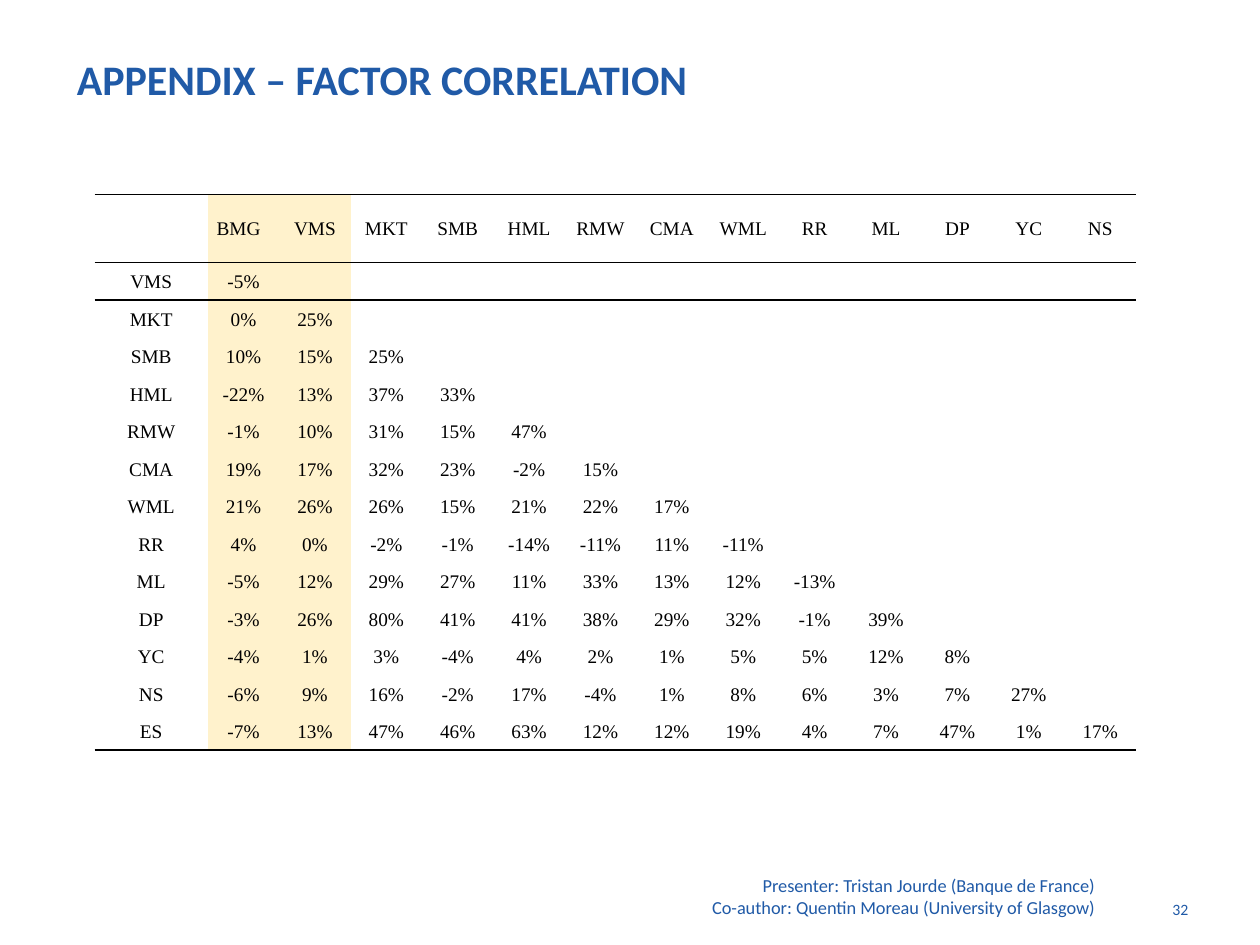
"""Build the appendix slide with the factor correlation table."""
import pptx
import pptx.dml.color
import pptx.enum.text
import pptx.oxml
import pptx.oxml.ns
import pptx.util

BLUE = pptx.dml.color.RGBColor(0x20, 0x5A, 0xA7)
BLACK = pptx.dml.color.RGBColor(0x00, 0x00, 0x00)
CREAM = pptx.dml.color.RGBColor(0xFF, 0xF2, 0xCC)
NO_GRID_STYLE = "{2D5ABB26-0587-4C30-8999-92F81FD0307C}"
ALIGN = pptx.enum.text.PP_ALIGN
ANCHOR = pptx.enum.text.MSO_ANCHOR

FACTORS = ["BMG", "VMS", "MKT", "SMB", "HML", "RMW", "CMA", "WML", "RR", "ML", "DP", "YC", "NS", "ES"]
CORRELATIONS = [
    [-5],
    [0, 25],
    [10, 15, 25],
    [-22, 13, 37, 33],
    [-1, 10, 31, 15, 47],
    [19, 17, 32, 23, -2, 15],
    [21, 26, 26, 15, 21, 22, 17],
    [4, 0, -2, -1, -14, -11, 11, -11],
    [-5, 12, 29, 27, 11, 33, 13, 12, -13],
    [-3, 26, 80, 41, 41, 38, 29, 32, -1, 39],
    [-4, 1, 3, -4, 4, 2, 1, 5, 5, 12, 8],
    [-6, 9, 16, -2, 17, -4, 1, 8, 6, 3, 7, 27],
    [-7, 13, 47, 46, 63, 12, 12, 19, 4, 7, 47, 1, 17],
]


def add_run(paragraph, text, size, color, face="Calibri", bold=False):
    run = paragraph.add_run()
    run.text = text
    run.font.size = pptx.util.Pt(size)
    run.font.name = face
    run.font.bold = bold
    run.font.color.rgb = color


def add_rule(cell, side):
    cell._tc.get_or_add_tcPr().append(pptx.oxml.parse_xml(
        f'<a:{side} {pptx.oxml.ns.nsdecls("a")} w="12700"><a:solidFill>'
        f'<a:srgbClr val="{BLACK}"/></a:solidFill></a:{side}>'))


deck = pptx.Presentation()
deck.slide_width = pptx.util.Inches(10)
deck.slide_height = pptx.util.Inches(7.5)
col = deck.slide_width / 100
row = deck.slide_height / 100
slide = deck.slides.add_slide(deck.slide_layouts[5])

title = slide.shapes.title
title.left, title.top = int(5.1 * col), 0
title.width, title.height = int(90 * col), int(16.67 * row)
title.text_frame.vertical_anchor = ANCHOR.MIDDLE
heading = title.text_frame.paragraphs[0]
heading.alignment = ALIGN.LEFT
add_run(heading, "APPENDIX – FACTOR CORRELATION", 24, BLUE, bold=True)

footers = [
    (89.4, 94.53, 5.9, 9, ["32"]),
    (33.5, 91.87, 54.4, 10.5, ["Presenter: Tristan Jourde (Banque de France)",
                               "Co-author: Quentin Moreau (University of Glasgow)"]),
]
for left, top, width, size, lines in footers:
    footer = slide.shapes.add_textbox(
        int(left * col), int(top * row), int(width * col), int(5.2 * row)).text_frame
    footer.word_wrap = True
    for number, line in enumerate(lines):
        paragraph = footer.add_paragraph() if number else footer.paragraphs[0]
        paragraph.alignment = ALIGN.RIGHT
        add_run(paragraph, line, size, BLUE)

grid = [[""] + FACTORS[:-1]]
for factor, values in zip(FACTORS[1:], CORRELATIONS):
    blanks = [""] * (len(FACTORS) - 1 - len(values))
    grid.append([factor] + [f"{value}%" for value in values] + blanks)
last = len(grid) - 1

matrix_frame = slide.shapes.add_table(
    len(grid), len(grid[0]), int(7.5 * col), int(20.6 * row), int(82.7 * col), int(58.8 * row))
matrix = matrix_frame.table
matrix.first_row = matrix.horz_banding = False
matrix._tbl.tblPr.find(pptx.oxml.ns.qn("a:tableStyleId")).text = NO_GRID_STYLE
for index, column in enumerate(matrix.columns):
    column.width = int((73.7 / last if index else 9) * col)
for index, line in enumerate(matrix.rows):
    line.height = int((51.6 / last if index else 7.2) * row)

for r, texts in enumerate(grid):
    for c, text in enumerate(texts):
        cell = matrix.cell(r, c)
        cell.margin_left = cell.margin_right = pptx.util.Inches(0.07)
        cell.margin_top = cell.margin_bottom = 0
        cell.vertical_anchor = ANCHOR.MIDDLE
        if r <= 1:
            add_rule(cell, "lnT")
        if r in (0, last):
            add_rule(cell, "lnB")
        if c in (1, 2):
            cell.fill.solid()
            cell.fill.fore_color.rgb = CREAM
        else:
            cell.fill.background()
        entry = cell.text_frame.paragraphs[0]
        entry.alignment = ALIGN.LEFT if (r, c) == (0, 1) else ALIGN.CENTER
        entry.line_spacing = 1.07
        if text:
            add_run(entry, text, 11, BLACK, "Times New Roman")
        else:
            entry._p.append(pptx.oxml.parse_xml(
                f'<a:endParaRPr {pptx.oxml.ns.nsdecls("a")} sz="1100"/>'))

deck.save("out.pptx")
